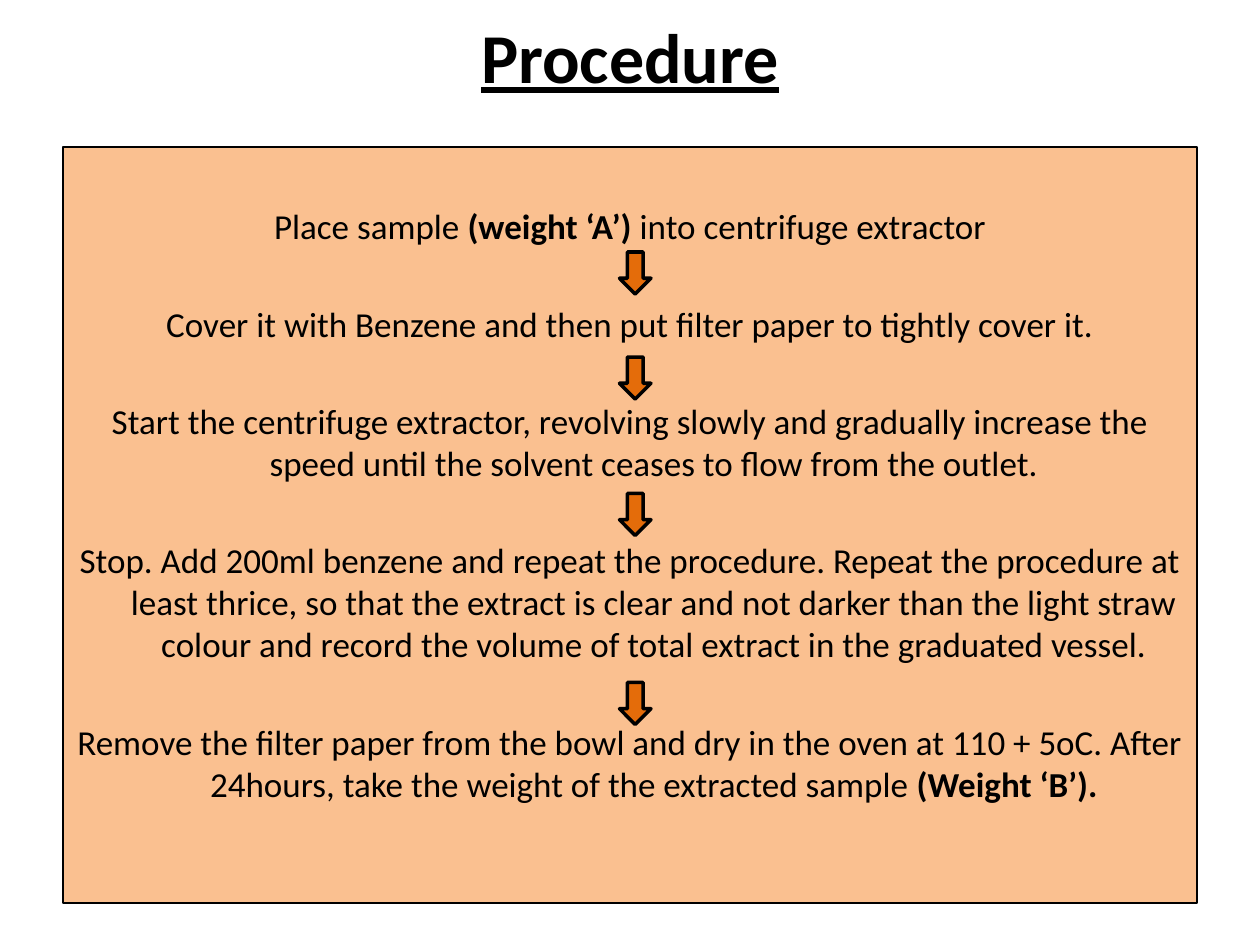
from dataclasses import dataclass

from pptx import Presentation
from pptx.dml.color import RGBColor
from pptx.enum.shapes import MSO_SHAPE
from pptx.enum.text import MSO_ANCHOR, PP_ALIGN
from pptx.util import Inches, Pt

CENTER = PP_ALIGN.CENTER
TOP, MIDDLE = MSO_ANCHOR.TOP, MSO_ANCHOR.MIDDLE
PANEL, DOWN_ARROW = MSO_SHAPE.RECTANGLE, MSO_SHAPE.DOWN_ARROW

COLUMNS, ROWS = 120, 90
CELL = Inches(10) // COLUMNS


@dataclass(frozen=True)
class Theme:
    font: str = "Calibri"
    ink: RGBColor = RGBColor(0x00, 0x00, 0x00)
    panel: RGBColor = RGBColor(0xFA, 0xC0, 0x90)
    arrow: RGBColor = RGBColor(0xE4, 0x6C, 0x0A)
    title_size: float = 40
    step_size: float = 20
    step_gap: float = 31.6
    panel_line: float = 0.75
    arrow_line: float = 2


THEME = Theme()

STEPS = [
    [("Place sample ", False), ("(weight ‘A’) ", True), ("into centrifuge extractor", False)],
    [("Cover it with Benzene and then put filter paper to tightly cover it.", False)],
    [("Start the centrifuge extractor, revolving slowly and gradually increase the "
      "speed until the solvent ceases to flow from the outlet.", False)],
    [("Stop. Add 200ml benzene and repeat the procedure. Repeat the procedure at "
      "least thrice, so that the extract is clear and not darker than the light straw "
      "colour and record the volume of total extract in the graduated vessel.", False)],
    [("Remove the filter paper from the bowl and dry in the oven at 110 + 5oC. After "
      "24hours, take the weight of the extracted sample ", False), ("(Weight ‘B’).", True)],
]
ARROW_ROWS = [10, 20, 33, 51]


def cells(box):
    return [round(length * CELL) for length in box]


def style_run(run, size, bold):
    run.font.name = THEME.font
    run.font.size = Pt(size)
    run.font.color.rgb = THEME.ink
    run.font.bold = bold


def add_filled(slide, preset, box, fill, line_width):
    shape = slide.shapes.add_shape(preset, *cells(box))
    shape.shadow.inherit = False
    shape.fill.solid()
    shape.fill.fore_color.rgb = fill
    shape.line.color.rgb = THEME.ink
    shape.line.width = Pt(line_width)
    return shape


def add_heading(slide, box, wording):
    frame = slide.shapes.add_textbox(*cells(box)).text_frame
    frame.word_wrap = True
    frame.vertical_anchor = MIDDLE
    frame.text = wording
    heading = frame.paragraphs[0]
    heading.alignment = CENTER
    style_run(heading.runs[0], THEME.title_size, True)
    heading.runs[0].font.underline = True


def add_procedure(slide, box, steps, arrow_rows):
    left, top, width, _ = box
    frame = add_filled(slide, PANEL, box, THEME.panel, THEME.panel_line).text_frame
    frame.word_wrap = True
    frame.vertical_anchor = TOP
    frame.margin_top = Inches(0.46)
    for index, step in enumerate(steps):
        paragraph = frame.add_paragraph() if index else frame.paragraphs[0]
        paragraph.alignment = CENTER
        if index:
            paragraph.space_before = Pt(THEME.step_gap)
        properties = paragraph._p.get_or_add_pPr()
        properties.set("marL", str(Inches(0.38)))
        properties.set("indent", str(-Inches(0.38)))
        for wording, bold in step:
            run = paragraph.add_run()
            run.text = wording
            style_run(run, THEME.step_size, bold)
    arrow_left = left + width / 2 - 1
    for row in arrow_rows:
        add_filled(slide, DOWN_ARROW, (arrow_left, top + row, 3, 4),
                   THEME.arrow, THEME.arrow_line)


def main():
    deck = Presentation()
    deck.slide_width = COLUMNS * CELL
    deck.slide_height = ROWS * CELL
    slide = deck.slides.add_slide(deck.slide_layouts[6])
    add_heading(slide, (6, 0, 108, 10.5), "Procedure")
    add_procedure(slide, (6, 14, 108, 72), STEPS, ARROW_ROWS)
    deck.save("out.pptx")


if __name__ == "__main__":
    main()
